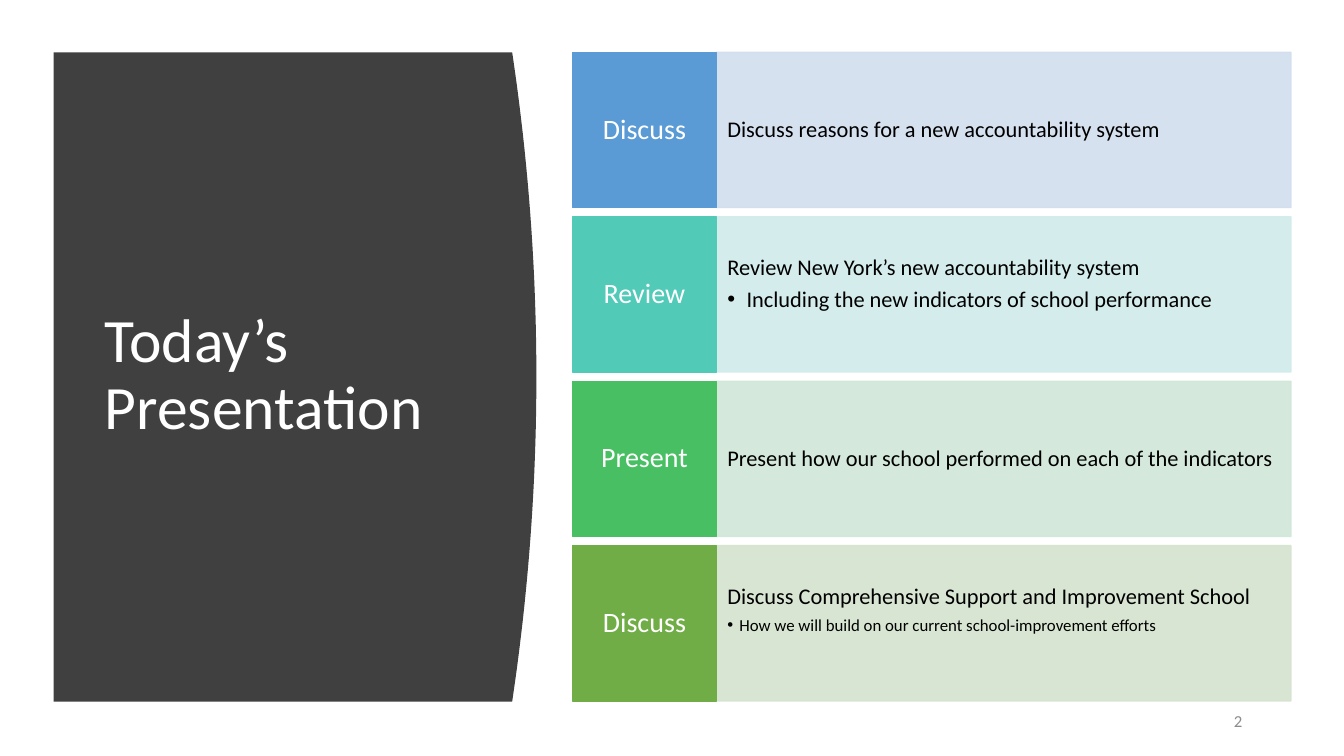
from lxml.etree import SubElement
from pptx import Presentation
from pptx.dml.color import RGBColor
from pptx.enum.shapes import MSO_SHAPE as Preset
from pptx.enum.text import MSO_ANCHOR as Anchor, MSO_AUTO_SIZE as AutoSize, PP_ALIGN as Align
from pptx.oxml.ns import qn
from pptx.util import Inches, Pt

SLIDE_WIDTH, SLIDE_HEIGHT = Inches(13.33), Inches(7.5)
COLORS = {
    "panel": "404040", "white": "FFFFFF", "black": "000000", "number": "8C8C8C",
    "blue": "5B9BD5", "pale blue": "D2DEEF",
    "teal": "52CAB8", "pale teal": "D0ECEA",
    "green": "49BF64", "pale green": "D0E7D8",
    "olive": "70AD47", "pale olive": "D5E3CF",
}
LABEL_LEFT, LABEL_WIDTH = 42.6, 10.7
DETAIL_LEFT, DETAIL_WIDTH = LABEL_LEFT + LABEL_WIDTH, 42.76
TOP, ROW_HEIGHT, ROW_PITCH = 6.93, 20.53, 21.75
AGENDA = [
    ("Discuss", "blue", "Discuss reasons for a new accountability system", None),
    ("Review", "teal", "Review New York’s new accountability system",
     ("Including the new indicators of school performance", 16, 0.19)),
    ("Present", "green", "Present how our school performed on each of the indicators", None),
    ("Discuss", "olive", "Discuss Comprehensive Support and Improvement School",
     ("How we will build on our current school-improvement efforts", 12, 0.12)),
]


def color(name):
    return RGBColor.from_string(COLORS[name])


def across(percent):
    return round(SLIDE_WIDTH * percent / 100)


def down(percent):
    return round(SLIDE_HEIGHT * percent / 100)


def area(left, top, width, height):
    return across(left), down(top), across(width), down(height)


def write(paragraph, text, size, color_name, align=Align.LEFT, line_spacing=0.9):
    paragraph.text = text
    paragraph.alignment = align
    paragraph.line_spacing = line_spacing
    paragraph.font.name = "Calibri"
    paragraph.font.size = Pt(size)
    paragraph.font.color.rgb = color(color_name)


def add_bullet(paragraph, indent):
    properties = paragraph._p.get_or_add_pPr()
    properties.set("marL", str(Inches(indent)))
    properties.set("indent", str(-Inches(indent)))
    SubElement(properties, qn("a:buFont")).set("typeface", "Arial")
    SubElement(properties, qn("a:buChar")).set("char", "•")


def add_panel(slide):
    left, right, bulge = across(3.98), across(38.11), across(1.8)
    top, bottom = down(TOP), down(92.8)
    steps = 40
    edge = []
    for step in range(steps + 1):
        share = step / steps
        x = right + bulge * (1 - (2 * share - 1) ** 2)
        edge.append((round(x), round(top + (bottom - top) * share)))
    builder = slide.shapes.build_freeform(left, top)
    builder.add_line_segments(edge + [(left, bottom)], close=True)
    panel = builder.convert_to_shape()
    panel.shadow.inherit = False
    panel.fill.solid()
    panel.fill.fore_color.rgb = color("panel")
    panel.line.fill.background()
    return panel


def set_title(slide, text):
    title = slide.shapes.title
    title.left, title.top, title.width, title.height = area(7.05, 14.8, 28.06, 69.87)
    frame = title.text_frame
    frame.word_wrap = True
    frame.auto_size = AutoSize.NONE
    frame.vertical_anchor = Anchor.MIDDLE
    write(frame.paragraphs[0], text, 44, "white")
    return title


def add_block(slide, bounds, color_name, margins, opacity=100):
    block = slide.shapes.add_shape(Preset.RECTANGLE, *bounds)
    block.shadow.inherit = False
    block.fill.solid()
    block.line.fill.solid()
    block.line.width = Pt(1)
    for paint in (block.fill, block.line.fill):
        paint.fore_color.rgb = color(color_name)
    if opacity < 100:
        for tint in block.element.spPr.iter(qn("a:srgbClr")):
            SubElement(tint, qn("a:alpha")).set("val", str(opacity * 1000))
    frame = block.text_frame
    frame.word_wrap = True
    frame.vertical_anchor = Anchor.MIDDLE
    frame.margin_left = frame.margin_right = Inches(margins[0])
    frame.margin_top = frame.margin_bottom = Inches(margins[1])
    return frame


def add_agenda_row(slide, row, label, color_name, detail, point):
    top = TOP + row * ROW_PITCH
    detail_frame = add_block(slide, area(DETAIL_LEFT, top, DETAIL_WIDTH, ROW_HEIGHT),
                             f"pale {color_name}", (0.11, 0.39), opacity=90)
    write(detail_frame.paragraphs[0], detail, 16, "black")
    if point:
        text, size, indent = point
        detail_frame.vertical_anchor = Anchor.TOP
        detail_frame.paragraphs[0].space_after = Pt(5.6)
        paragraph = detail_frame.add_paragraph()
        write(paragraph, text, size, "black")
        paragraph.level = 1
        add_bullet(paragraph, indent)
    label_frame = add_block(slide, area(LABEL_LEFT, top, LABEL_WIDTH, ROW_HEIGHT),
                            color_name, (0.08, 0.15))
    write(label_frame.paragraphs[0], label, 20, "white", Align.CENTER)


def add_slide_number(slide, number):
    frame = slide.shapes.add_textbox(*area(70.67, 92.67, 22.5, 5.33)).text_frame
    frame.word_wrap = True
    frame.vertical_anchor = Anchor.MIDDLE
    write(frame.paragraphs[0], number, 12, "number", Align.RIGHT, 1.0)


def main():
    presentation = Presentation()
    presentation.slide_width, presentation.slide_height = SLIDE_WIDTH, SLIDE_HEIGHT
    slide = presentation.slides.add_slide(presentation.slide_layouts[5])
    title = set_title(slide, "Today’s Presentation")
    title.element.addprevious(add_panel(slide).element)
    for row, entry in enumerate(AGENDA):
        add_agenda_row(slide, row, *entry)
    add_slide_number(slide, "2")
    presentation.save("out.pptx")


if __name__ == "__main__":
    main()
